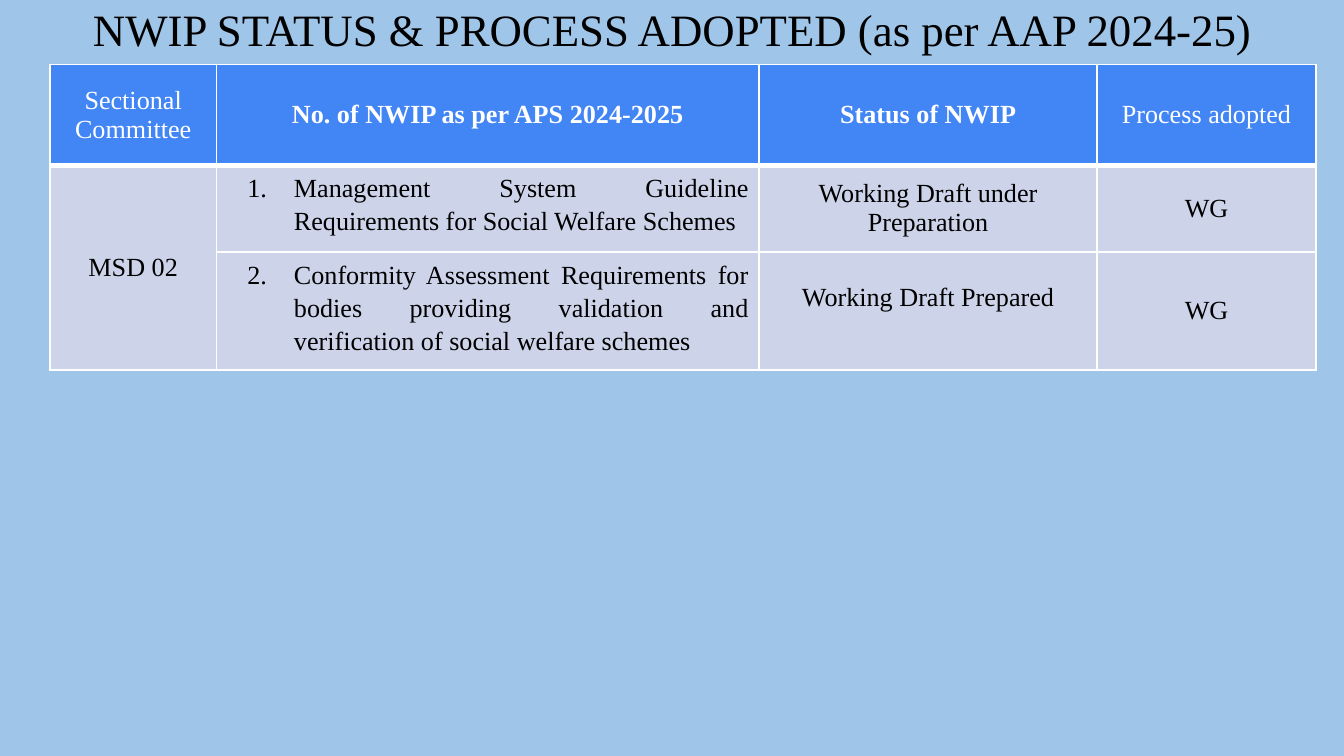
from dataclasses import dataclass

from lxml import etree
from pptx import Presentation
from pptx.dml.color import RGBColor
from pptx.enum.text import MSO_ANCHOR, PP_ALIGN
from pptx.oxml.ns import qn
from pptx.util import Pt

CENTER = PP_ALIGN.CENTER
JUSTIFY = PP_ALIGN.JUSTIFY
MIDDLE = MSO_ANCHOR.MIDDLE
TOP = MSO_ANCHOR.TOP


@dataclass(frozen=True)
class Theme:
    background: str = "9FC5E8"
    header: str = "4285F4"
    body: str = "CDD4EA"
    light: str = "FFFFFF"
    dark: str = "000000"
    font: str = "Times New Roman"
    title_size: float = 24
    table_size: float = 14
    thin: float = 1
    thick: float = 3


def write_text(frame, text, *, theme, size, color, bold=False,
               align=CENTER, spacing=1.0, number=None):
    frame.word_wrap = True
    paragraph = frame.paragraphs[0]
    paragraph.alignment = align
    paragraph.line_spacing = spacing
    run = paragraph.add_run()
    run.text = text
    run.font.name = theme.font
    run.font.size = Pt(size)
    run.font.bold = bold
    run.font.color.rgb = RGBColor.from_string(color)
    if number:
        properties = paragraph._p.get_or_add_pPr()
        properties.set("marL", str(Pt(36)))
        properties.set("indent", str(Pt(-25)))
        bullet_color = etree.SubElement(properties, qn("a:buClr"))
        etree.SubElement(bullet_color, qn("a:srgbClr"), val=color)
        etree.SubElement(properties, qn("a:buAutoNum"),
                         type="arabicPeriod", startAt=str(number))


class SlideBuilder:
    def __init__(self, slide, theme):
        self.slide = slide
        self.theme = theme
        fill = slide.background.fill
        fill.solid()
        fill.fore_color.rgb = RGBColor.from_string(theme.background)

    def title(self, text, left, top, width, height):
        box = self.slide.shapes.add_textbox(Pt(left), Pt(top), Pt(width), Pt(height))
        frame = box.text_frame
        frame.vertical_anchor = MIDDLE
        frame.margin_left = frame.margin_right = Pt(5)
        frame.margin_top = frame.margin_bottom = Pt(2.7)
        write_text(frame, text, theme=self.theme, size=self.theme.title_size,
                   color=self.theme.dark, spacing=0.9)

    def table(self, left, top, widths, heights):
        frame = self.slide.shapes.add_table(
            len(heights), len(widths), Pt(left), Pt(top),
            Pt(sum(widths)), Pt(sum(heights)))
        table = frame.table
        for column, width in zip(table.columns, widths):
            column.width = Pt(width)
        for index, (row, height) in enumerate(zip(table.rows, heights)):
            row.height = Pt(height)
            for cell in row.cells:
                self.cell_style(cell, index)
        return table

    def cell_style(self, cell, row):
        theme = self.theme
        cell.fill.solid()
        cell.fill.fore_color.rgb = RGBColor.from_string(theme.body if row else theme.header)
        cell.margin_left = cell.margin_right = Pt(5.5)
        cell.margin_top = cell.margin_bottom = Pt(2.7)
        edges = {"L": theme.thin, "R": theme.thin,
                 "T": theme.thick if row == 1 else theme.thin,
                 "B": theme.thin if row else theme.thick}
        properties = cell._tc.get_or_add_tcPr()
        for position, (side, width) in enumerate(edges.items()):
            line = etree.Element(qn(f"a:ln{side}"), w=str(Pt(width)))
            fill = etree.SubElement(line, qn("a:solidFill"))
            etree.SubElement(fill, qn("a:srgbClr"), val=theme.light)
            properties.insert(position, line)

    def cell(self, cell, text, anchor=MIDDLE, **text_format):
        cell.vertical_anchor = anchor
        options = {"size": self.theme.table_size, "color": self.theme.dark}
        write_text(cell.text_frame, text, theme=self.theme, **(options | text_format))


def main():
    presentation = Presentation()
    presentation.slide_width = Pt(720)
    presentation.slide_height = Pt(405)
    slide = presentation.slides.add_slide(presentation.slide_layouts[6])
    theme = Theme()
    builder = SlideBuilder(slide, theme)
    builder.title("NWIP STATUS & PROCESS ADOPTED (as per AAP 2024-25)", 21, 0, 678, 34.5)

    table = builder.table(26.8, 34.5, [89.2, 290.8, 181, 117.3], [54, 46.5, 58.5])
    headers = [("Sectional Committee", False),
               ("No. of NWIP as per APS 2024-2025", True),
               ("Status of NWIP", True),
               ("Process adopted", False)]
    for column, (text, bold) in enumerate(headers):
        builder.cell(table.cell(0, column), text, color=theme.light, bold=bold)

    committee = table.cell(1, 0)
    committee.merge(table.cell(2, 0))
    builder.cell(committee, "MSD 02")
    proposals = [
        ("Management System Guideline Requirements for Social Welfare Schemes",
         "Working Draft under Preparation", "WG"),
        ("Conformity Assessment Requirements for bodies providing validation and "
         "verification of social welfare schemes",
         "Working Draft Prepared", "WG"),
    ]
    for row, (proposal, status, process) in enumerate(proposals, start=1):
        builder.cell(table.cell(row, 1), proposal, anchor=TOP,
                     align=JUSTIFY, spacing=1.15, number=row)
        builder.cell(table.cell(row, 2), status)
        builder.cell(table.cell(row, 3), process)
    table.cell(2, 2).margin_bottom = Pt(17)

    presentation.save("out.pptx")


if __name__ == "__main__":
    main()
